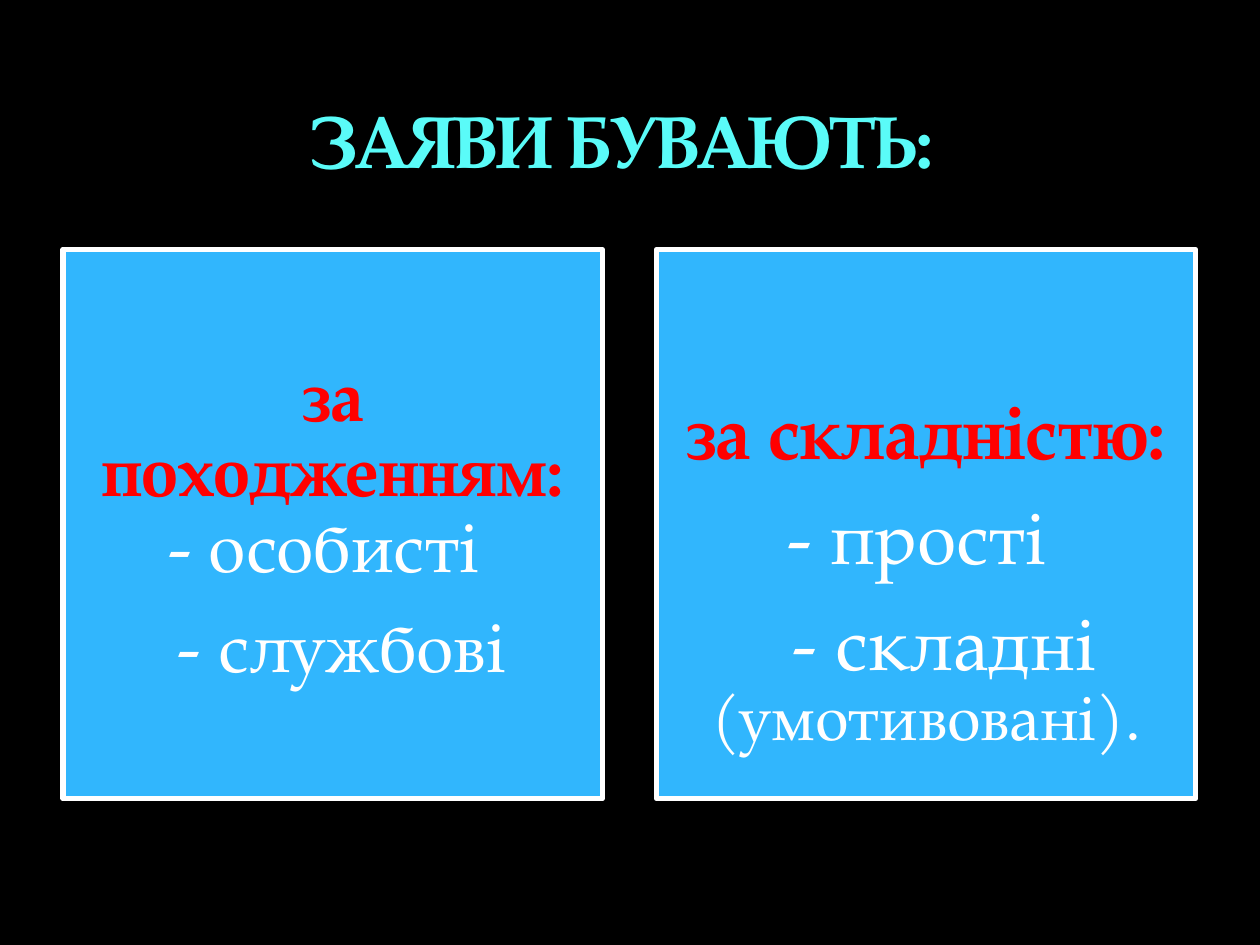
from pptx import Presentation
from pptx.dml.color import RGBColor
from pptx.enum.shapes import MSO_SHAPE
from pptx.enum.text import MSO_ANCHOR, PP_ALIGN
from pptx.util import Inches, Pt

RECTANGLE = MSO_SHAPE.RECTANGLE
MIDDLE, BOTTOM = MSO_ANCHOR.MIDDLE, MSO_ANCHOR.BOTTOM
CENTER = PP_ALIGN.CENTER

BLACK = RGBColor(0x00, 0x00, 0x00)
WHITE = RGBColor(0xFF, 0xFF, 0xFF)
AQUA = RGBColor(0x5A, 0xFB, 0xF8)
BLUE = RGBColor(0x31, 0xB6, 0xFD)
RED = RGBColor(0xFF, 0x00, 0x00)


class SlideBuilder:
    """Holds the common style and the slide being filled."""

    font_name = "TeX Gyre Pagella"
    inset = 0.17

    def __init__(self, slide):
        self.slide = slide

    def background(self, color):
        fill = self.slide.background.fill
        fill.solid()
        fill.fore_color.rgb = color

    def run(self, paragraph, text, size, color, bold=False):
        run = paragraph.add_run()
        run.text = text
        font_format = {"name": self.font_name, "size": Pt(size), "bold": bold}
        for attribute, value in font_format.items():
            setattr(run.font, attribute, value)
        run.font.color.rgb = color
        return run

    def title(self, text, left, top, width, height):
        box = self.slide.shapes.add_textbox(
            Inches(left), Inches(top), Inches(width), Inches(height))
        frame = box.text_frame
        frame.word_wrap = True
        frame.vertical_anchor = BOTTOM
        heading = frame.paragraphs[0]
        heading.alignment = CENTER
        run = self.run(heading, text, 42, AQUA, bold=True)
        run.font._element.set("spc", "-100")

    def card(self, left, top, width, height, paragraphs, space_after, drop=0):
        """Draw a card; drop lowers the start of its text area."""
        card = self.slide.shapes.add_shape(
            RECTANGLE, Inches(left), Inches(top), Inches(width), Inches(height))
        card.shadow.inherit = False
        card.fill.solid()
        card.fill.fore_color.rgb = BLUE
        card.line.color.rgb = WHITE
        card.line.width = Pt(3)

        frame = card.text_frame
        frame_format = {
            "word_wrap": True,
            "vertical_anchor": MIDDLE,
            "margin_left": Inches(self.inset),
            "margin_right": Inches(self.inset),
            "margin_top": Inches(self.inset + drop),
            "margin_bottom": Inches(self.inset),
        }
        for attribute, value in frame_format.items():
            setattr(frame, attribute, value)

        for index, (indent, runs) in enumerate(paragraphs):
            paragraph = frame.add_paragraph() if index else frame.paragraphs[0]
            paragraph.alignment = CENTER
            paragraph.line_spacing = 0.9
            paragraph.space_after = Pt(space_after)
            if indent:
                paragraph._p.get_or_add_pPr().set("indent", str(Inches(indent)))
            for run in runs:
                self.run(paragraph, *run)


def main():
    presentation = Presentation()
    presentation.slide_width = Inches(10)
    presentation.slide_height = Inches(7.5)
    builder = SlideBuilder(
        presentation.slides.add_slide(presentation.slide_layouts[6]))
    builder.background(BLACK)

    # Title
    builder.title("ЗАЯВИ БУВАЮТЬ: ", 0.5, 0.17, 9, 1.33)

    # Two cards: each paragraph is a first-line indent and its runs
    by_origin = [
        (0, [("за походженням: ", 40, RED, True), ("- особисті ", 40, WHITE)]),
        (0.14, [("- службові", 40, WHITE)]),
    ]
    by_complexity = [
        (0, [("за складністю:", 42, RED, True)]),
        (0, [("- прості ", 42, WHITE)]),
        (0.29, [("- складні ", 42, WHITE), ("(умотивовані).", 36, WHITE)]),
    ]
    cards = [(by_origin, 14, 0), (by_complexity, 14.7, 0.81)]
    width, gap = 4.28, 0.43
    for column, (paragraphs, space_after, drop) in enumerate(cards):
        builder.card(0.5 + column * (width + gap), 1.98, width, 4.36,
                     paragraphs, space_after, drop)

    presentation.save("out.pptx")


if __name__ == "__main__":
    main()
